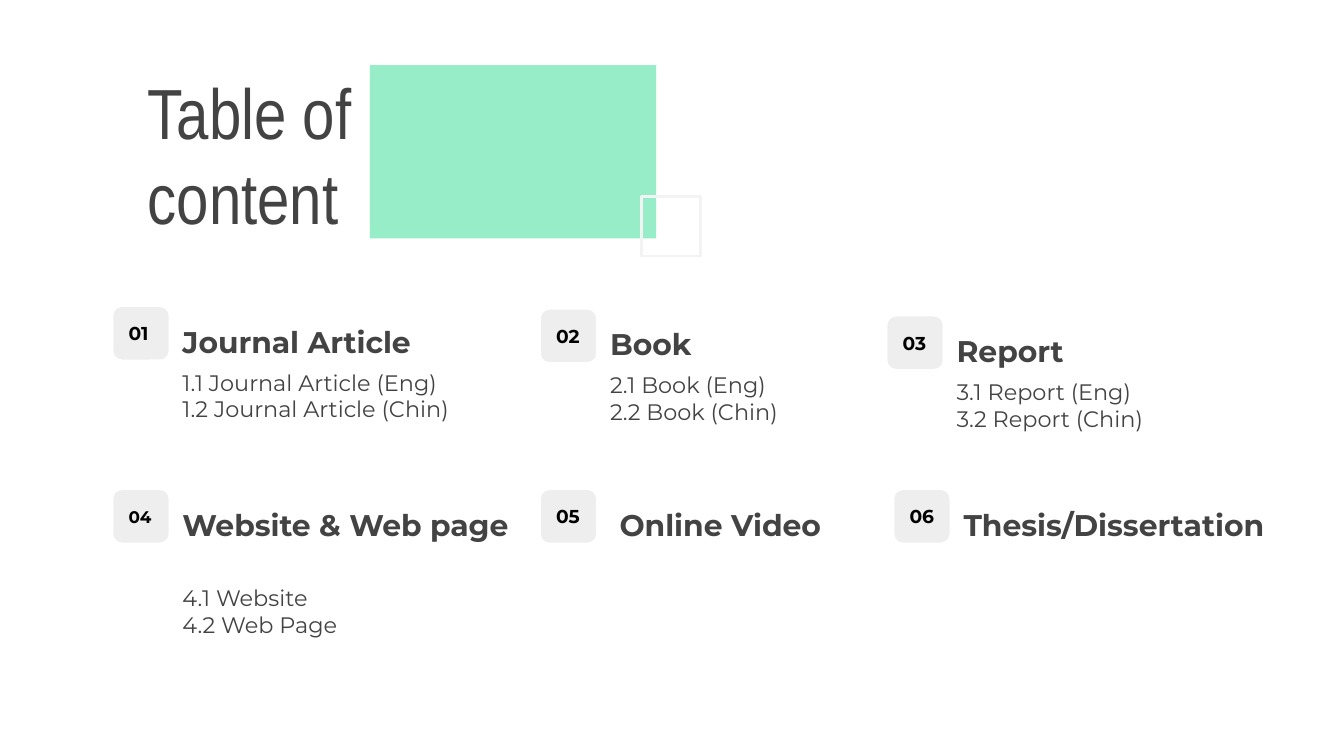
from pptx import Presentation
from pptx.dml.color import RGBColor
from pptx.enum.shapes import MSO_SHAPE
from pptx.enum.text import MSO_ANCHOR, PP_ALIGN
from pptx.util import Cm, Pt

HUES = {"mint": "96EDC7", "frame": "F3F3F3", "badge": "EEEEEE",
        "edge": "FFFFFF", "text": "434343", "label": "000000"}

FORMS = {
    "title": {"name": "Arial Narrow", "size": Pt(38), "bold": False},
    "head": {"name": "Montserrat", "size": Pt(16), "bold": True},
    "list": {"name": "Montserrat", "size": Pt(12), "bold": False},
    "label": {"name": "Montserrat", "size": Pt(10), "bold": True},
    "small": {"name": "Montserrat", "size": Pt(9), "bold": True},
}

INSET = {f"margin_{side}": Cm(0.25) for side in ("left", "top", "right", "bottom")}

TOPICS = [
    {"at": (2.13, 5.79), "head": "Journal Article",
     "list": ["1.1 Journal Article (Eng)", "1.2 Journal Article (Chin)"]},
    {"at": (10.21, 5.84), "head": "Book",
     "list": ["2.1 Book (Eng)", "2.2 Book (Chin)"]},
    {"at": (16.76, 5.97), "head": "Report",
     "list": ["3.1 Report (Eng)", "3.2 Report (Chin)"]},
    {"at": (2.13, 9.25), "head": "Website & Web page", "wide": 6.73,
     "list": ["4.1 Website", "4.2 Web Page"], "drop": 1.58, "form": "small"},
    {"at": (10.21, 9.25), "head": "Online Video", "shift": 1.25},
    {"at": (16.89, 9.25), "head": "Thesis/Dissertation", "wide": 6.4},
]


class Page:
    """Hold the style and the current slide, and draw each kind of element."""

    def __init__(self, deck):
        self.slide = deck.slides.add_slide(deck.slide_layouts[6])

    def hue(self, name):
        return RGBColor.from_string(HUES[name])

    def label(self, shape, lines, form, hue="text", space=1.0, anchor=MSO_ANCHOR.TOP):
        frame = shape.text_frame
        rules = {**INSET, "word_wrap": True, "vertical_anchor": anchor}
        for key, value in rules.items():
            setattr(frame, key, value)
        frame.text = "\n".join(lines)
        for para in frame.paragraphs:
            para.alignment = PP_ALIGN.LEFT
            para.line_spacing = space
            font = para.runs[0].font
            for key, value in FORMS[form].items():
                setattr(font, key, value)
            font.color.rgb = self.hue(hue)

    def text(self, box, lines, form, space=1.0):
        shape = self.slide.shapes.add_textbox(*map(Cm, box))
        self.label(shape, lines, form, space=space)

    def shape(self, kind, box, fill=None, edge=None, width=0.75):
        shape = self.slide.shapes.add_shape(kind, *map(Cm, box))
        shape.shadow.inherit = False
        if fill:
            shape.fill.solid()
            shape.fill.fore_color.rgb = self.hue(fill)
        else:
            shape.fill.background()
        if edge:
            shape.line.color.rgb = self.hue(edge)
            shape.line.width = Pt(width)
        else:
            shape.line.fill.background()
        return shape

    def badge(self, left, top, mark, form):
        shape = self.shape(MSO_SHAPE.ROUNDED_RECTANGLE, (left, top, 1.07, 1.02),
                           "badge", "edge")
        shape.adjustments[0] = 0.17
        self.label(shape, [mark], form, "label", anchor=MSO_ANCHOR.MIDDLE)

    def topic(self, rank, item):
        left, top = item["at"]
        side, high = left + 1.07, top - 0.03
        self.text((left + item.get("shift", 1.07), high, item.get("wide", 5.56), 0.97),
                  [item["head"]], "head", 1.15)
        if "list" in item:
            self.text((side, high + item.get("drop", 0.96), 6.4, 1.5),
                      item["list"], "list")
        self.badge(left, top, f"{rank:02}", item.get("form", "label"))


def main():
    deck = Presentation()
    deck.slide_width, deck.slide_height = Cm(25.4), Cm(14.29)
    page = Page(deck)
    page.shape(MSO_SHAPE.RECTANGLE, (6.99, 1.23, 5.41, 3.28), "mint")
    page.shape(MSO_SHAPE.RECTANGLE, (12.12, 3.72, 1.12, 1.12), edge="frame", width=1.5)
    page.text((2.54, 1.04, 4.52, 3.28), ["Table of content"], "title")
    for rank, item in enumerate(TOPICS, 1):
        page.topic(rank, item)
    deck.save("out.pptx")


if __name__ == "__main__":
    main()
